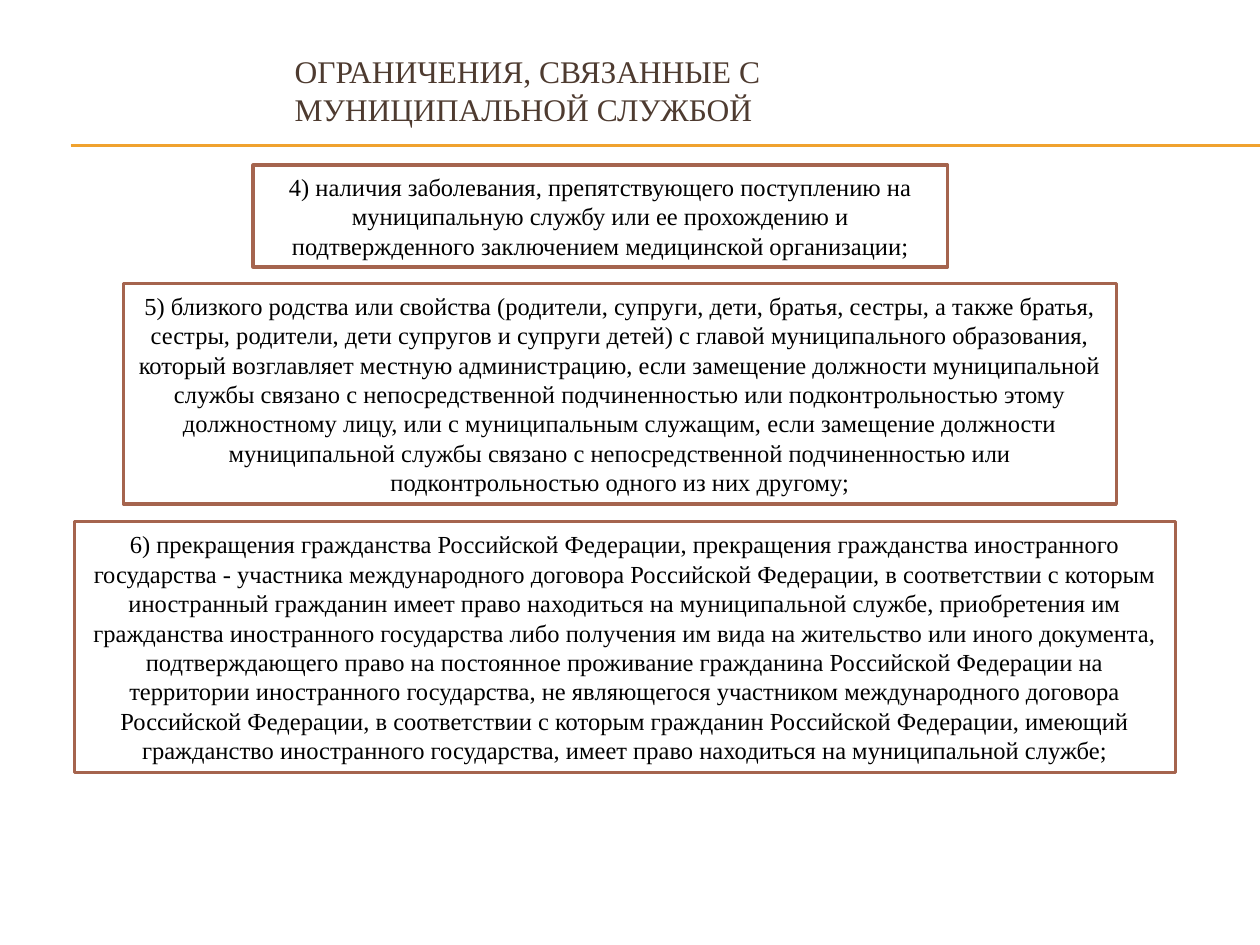
import pptx
import pptx.dml.color
import pptx.enum.shapes
import pptx.enum.text
import pptx.util
from lxml import etree
from pptx.util import Inches

COLORS = {
    "page": "FFFFFF",
    "title": "4E3B30",
    "text": "000000",
    "border": "A5644E",
    "rule": "F0A22E",
}
FONT = "Times New Roman"
EFFECTS_TAG = "{http://schemas.openxmlformats.org/drawingml/2006/main}effectLst"

TITLE = "ОГРАНИЧЕНИЯ, СВЯЗАННЫЕ С МУНИЦИПАЛЬНОЙ СЛУЖБОЙ"

# left, top, width, height, text
RESTRICTIONS = [
    (2.01, 1.31, 5.51, 0.81,
     "4) наличия заболевания, препятствующего поступлению на муниципальную "
     "службу или ее прохождению и подтвержденного заключением медицинской "
     "организации;"),
    (0.98, 2.25, 7.88, 1.75,
     "5) близкого родства или свойства (родители, супруги, дети, братья, "
     "сестры, а также братья, сестры, родители, дети супругов и супруги детей) "
     "с главой муниципального образования, который возглавляет местную "
     "администрацию, если замещение должности муниципальной службы связано с "
     "непосредственной подчиненностью или подконтрольностью этому должностному "
     "лицу, или с муниципальным служащим, если замещение должности "
     "муниципальной службы связано с непосредственной подчиненностью или "
     "подконтрольностью одного из них другому;"),
    (0.59, 4.14, 8.74, 1.99,
     "6) прекращения гражданства Российской Федерации, прекращения гражданства "
     "иностранного государства - участника международного договора Российской "
     "Федерации, в соответствии с которым иностранный гражданин имеет право "
     "находиться на муниципальной службе, приобретения им гражданства "
     "иностранного государства либо получения им вида на жительство или иного "
     "документа, подтверждающего право на постоянное проживание гражданина "
     "Российской Федерации на территории иностранного государства, не "
     "являющегося участником международного договора Российской Федерации, в "
     "соответствии с которым гражданин Российской Федерации, имеющий "
     "гражданство иностранного государства, имеет право находиться на "
     "муниципальной службе;"),
]


def color(name):
    return pptx.dml.color.RGBColor.from_string(COLORS[name])


class SlideBuilder:
    def __init__(self, slide):
        self.shapes = slide.shapes

    def set_text(self, shape, text, size, color_name, alignment):
        frame = shape.text_frame
        frame.word_wrap = True
        frame.vertical_anchor = pptx.enum.text.MSO_ANCHOR.MIDDLE
        frame.text = text
        para = frame.paragraphs[0]
        para.alignment = alignment
        font = para.runs[0].font
        font.name = FONT
        font.size = pptx.util.Pt(size)
        font.color.rgb = color(color_name)

    def title(self, left, top, width, height, text):
        box = self.shapes.add_textbox(
            Inches(left), Inches(top), Inches(width), Inches(height))
        self.set_text(box, text, 18, "title", pptx.enum.text.PP_ALIGN.LEFT)

    def bordered_box(self, left, top, width, height, text):
        box = self.shapes.add_shape(
            pptx.enum.shapes.MSO_SHAPE.RECTANGLE,
            Inches(left), Inches(top), Inches(width), Inches(height))
        box.shadow.inherit = False
        box.fill.solid()
        box.fill.fore_color.rgb = color("page")
        box.line.color.rgb = color("border")
        box.line.width = pptx.util.Pt(2)
        self.set_text(box, text, 14, "text", pptx.enum.text.PP_ALIGN.CENTER)

    def horizontal_rule(self, left, right, top):
        rule = self.shapes.add_connector(
            pptx.enum.shapes.MSO_CONNECTOR.STRAIGHT,
            Inches(left), Inches(top), Inches(right), Inches(top))
        rule.line.color.rgb = color("rule")
        rule.line.width = pptx.util.Pt(0.75)
        etree.SubElement(rule._element.spPr, EFFECTS_TAG)


def main():
    deck = pptx.Presentation()
    deck.slide_width = Inches(10)
    deck.slide_height = Inches(7.5)
    page = SlideBuilder(deck.slides.add_slide(deck.slide_layouts[6]))

    for top in (1.15, 1.16):
        page.horizontal_rule(0.56, 10, top)
    for restriction in RESTRICTIONS:
        page.bordered_box(*restriction)
    page.title(2.24, 0.36, 4.65, 0.71, TITLE)

    deck.save("out.pptx")


if __name__ == "__main__":
    main()
